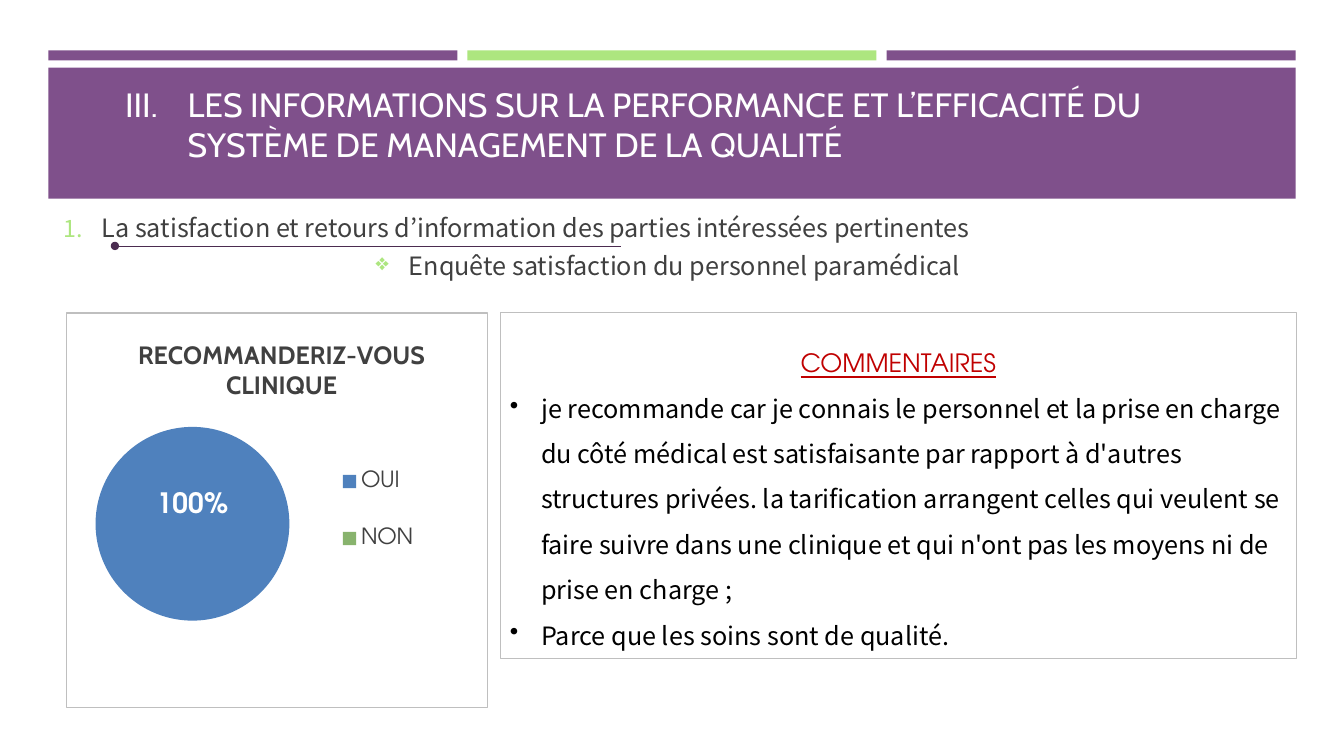
from lxml import etree
from pptx import Presentation
from pptx.chart.data import CategoryChartData
from pptx.dml.color import RGBColor
from pptx.enum.chart import XL_CHART_TYPE, XL_LABEL_POSITION, XL_LEGEND_POSITION
from pptx.enum.shapes import MSO_CONNECTOR, MSO_SHAPE
from pptx.enum.text import MSO_ANCHOR, MSO_AUTO_SIZE, PP_ALIGN
from pptx.oxml import parse_xml
from pptx.oxml.ns import nsdecls, qn
from pptx.util import Inches, Pt

COLORS = {
    "purple": "7F508B", "green": "ADE67F", "rule": "4B2C50", "border": "BFBFBF",
    "grey": "404040", "red": "C00000", "black": "000000", "white": "FFFFFF",
    "oui": "4F81BD", "non": "88B36D",
}
HEADING_FONT, BODY_FONT, ACCENT_FONT = "Cabin", "Noto Sans CJK KR", "TeX Gyre Adventor"


def rgb(name):
    return RGBColor.from_string(COLORS[name])


def style_font(font, face, size, color, bold=False):
    font.name, font.size, font.bold = face, Pt(size), bold
    font.color.rgb = rgb(color)


def add_run(paragraph, text, face, size, color):
    run = paragraph.add_run()
    run.text = text
    style_font(run.font, face, size, color)
    return run


def set_bullet(paragraph, indent, tag, color=None, **attributes):
    """Give the paragraph a hanging indent and a numbered or character bullet."""
    properties = paragraph._p.get_or_add_pPr()
    properties.set("marL", str(Inches(indent)))
    properties.set("indent", str(-Inches(indent)))
    if color:
        bullet_color = etree.SubElement(properties, qn("a:buClr"))
        etree.SubElement(bullet_color, qn("a:srgbClr"), val=COLORS[color])
        etree.SubElement(properties, qn("a:buSzPct"), val="92000")
    etree.SubElement(properties, qn(tag), **attributes)


def manual_layout(x, y, w=None, h=None, modes=True, inner=False):
    """Return a chart layout whose values are fractions of the chart's size."""
    parts = [("layoutTarget", "inner")] if inner else []
    if modes:
        parts += [("xMode", "edge"), ("yMode", "edge")]
    parts += [(k, v) for k, v in zip("xywh", (x, y, w, h)) if v is not None]
    body = "".join(f'<c:{tag} val="{value}"/>' for tag, value in parts)
    return parse_xml(f'<c:layout {nsdecls("c")}><c:manualLayout>{body}'
                     '</c:manualLayout></c:layout>')


def replace_layout(parent, layout, after):
    for old in parent.findall(qn("c:layout")):
        parent.remove(old)
    if after is None:
        parent.insert(0, layout)
    else:
        parent.find(qn(after)).addnext(layout)


def add_bar(slide, left, top, width, height, color):
    bar = slide.shapes.add_shape(MSO_SHAPE.RECTANGLE, Inches(left), Inches(top),
                                 Inches(width), Inches(height))
    bar.shadow.inherit = False
    bar.fill.solid()
    bar.fill.fore_color.rgb = rgb(color)
    bar.line.fill.background()


def add_banner(slide, left, top, width):
    gap = 0.1
    bar_width = (width - 2 * gap) / 3
    for i, color in enumerate(("purple", "green", "purple")):
        add_bar(slide, left + i * (bar_width + gap), top, bar_width, 0.1, color)
    add_bar(slide, left, top + 0.17, width, 1.3, "purple")

    title = slide.shapes.title
    slide.shapes._spTree.append(title._element)
    title.left, title.top = Inches(left + 0.66), Inches(top - 0.29)
    title.width, title.height = Inches(11.58), Inches(1.47)
    frame = title.text_frame
    frame.auto_size, frame.vertical_anchor = MSO_AUTO_SIZE.NONE, MSO_ANCHOR.BOTTOM
    paragraph = frame.paragraphs[0]
    paragraph.alignment = PP_ALIGN.LEFT
    set_bullet(paragraph, 0.62, "a:buAutoNum", type="romanUcPeriod", startAt="3")
    add_run(paragraph, "LES INFORMATIONS SUR LA PERFORMANCE ET L’EFFICACITÉ DU "
            "SYSTÈME DE MANAGEMENT DE LA QUALITÉ", HEADING_FONT, 24, "white")


def add_topic(slide, left, top, width, height):
    topic = slide.shapes.add_textbox(Inches(left), Inches(top), Inches(width), Inches(height))
    frame = topic.text_frame
    frame.word_wrap, frame.vertical_anchor = True, MSO_ANCHOR.MIDDLE
    section = frame.paragraphs[0]
    section.space_after = Pt(5)
    set_bullet(section, 0.38, "a:buAutoNum", "green", type="arabicPeriod")
    add_run(section, "La satisfaction et retours d’information des parties intéressées "
            "pertinentes", BODY_FONT, 18, "grey")
    survey = frame.add_paragraph()
    survey.alignment = PP_ALIGN.CENTER
    set_bullet(survey, 0.33, "a:buChar", "green", char="❖")
    add_run(survey, "Enquête satisfaction du personnel paramédical", BODY_FONT, 18, "grey")

    rule_y = Inches(top + 0.65)
    rule = slide.shapes.add_connector(MSO_CONNECTOR.STRAIGHT, Inches(left + 0.61), rule_y,
                                      Inches(left + 5.63), rule_y)
    rule.line.color.rgb, rule.line.width = rgb("rule"), Pt(0.25)
    etree.SubElement(rule.line._get_or_add_ln(), qn("a:headEnd"), type="oval")
    etree.SubElement(rule._element.spPr, qn("a:effectLst"))


def label_slices(series):
    """Show the share of the first slice only."""
    labels = series.data_labels
    labels.show_value, labels.show_percentage = False, True
    labels.position = XL_LABEL_POSITION.CENTER
    style_font(labels.font, ACCENT_FONT, 20, "white", bold=True)

    share = series.points[0].data_label
    style_font(share.font, ACCENT_FONT, 20, "white", bold=True)
    share.position = XL_LABEL_POSITION.CENTER
    share_xml = share._get_or_add_dLbl()
    share_xml.find(qn("c:showVal")).set("val", "0")
    share_xml.find(qn("c:showPercent")).set("val", "1")
    replace_layout(share_xml, manual_layout(0, -0.17, modes=False), "c:idx")

    empty_share = series.points[1].data_label._get_or_add_dLbl()
    for child in list(empty_share)[1:]:
        empty_share.remove(child)
    etree.SubElement(empty_share, qn("c:delete"), val="1")


def add_recommendation_chart(slide, left, top, width, height):
    data = CategoryChartData()
    data.categories = ["OUI", "NON"]
    data.add_series("Series 1", [100, 0])
    chart = slide.shapes.add_chart(XL_CHART_TYPE.PIE, Inches(left), Inches(top),
                                   Inches(width), Inches(height), data).chart
    style_font(chart.font, HEADING_FONT, 10, "black")
    border = parse_xml(f'<c:spPr {nsdecls("c", "a")}><a:noFill/><a:ln w="{Pt(0.75)}"><a:solidFill>'
                       f'<a:srgbClr val="{COLORS["border"]}"/></a:solidFill></a:ln></c:spPr>')
    chart._chartSpace.find(qn("c:txPr")).addprevious(border)

    chart.has_title = True
    heading = add_run(chart.chart_title.text_frame.paragraphs[0],
                      "RECOMMANDERIZ-VOUS CLINIQUE", HEADING_FONT, 18, "grey")
    heading.font.bold = True
    replace_layout(chart.chart_title._element, manual_layout(0.16, 0.05), "c:tx")

    chart.has_legend = True
    legend = chart.legend
    legend.position, legend.include_in_layout = XL_LEGEND_POSITION.RIGHT, False
    style_font(legend.font, ACCENT_FONT, 16, "grey")
    replace_layout(legend._element, manual_layout(0.62, 0.31, 0.24, 0.38), "c:legendPos")

    plot = chart.plots[0]
    plot.vary_by_categories = True
    replace_layout(chart._chartSpace.chart.plotArea,
                   manual_layout(0.07, 0.17, 0.46, 0.73, inner=True), None)
    series = plot.series[0]
    for i, color in enumerate(("oui", "non")):
        fill = series.points[i].format.fill
        fill.solid()
        fill.fore_color.rgb = rgb(color)
    label_slices(series)


def add_comments(slide, left, top, width, height):
    panel = slide.shapes.add_textbox(Inches(left), Inches(top), Inches(width), Inches(height))
    panel.line.color.rgb, panel.line.width = rgb("border"), Pt(0.75)
    frame = panel.text_frame
    frame.word_wrap = True
    heading = frame.paragraphs[0]
    heading.alignment, heading.line_spacing = PP_ALIGN.CENTER, 2.0
    add_run(heading, "COMMENTAIRES", ACCENT_FONT, 18, "red").font.underline = True
    for comment in (
        "je recommande car je connais le personnel et la prise en charge du côté médical est "
        "satisfaisante par rapport à d'autres structures privées. la tarification arrangent "
        "celles qui veulent se faire suivre dans une clinique et qui n'ont pas les moyens ni "
        "de prise en charge ;",
        "Parce que les soins sont de qualité.",
    ):
        paragraph = frame.add_paragraph()
        paragraph.line_spacing = 1.5
        set_bullet(paragraph, 0.31, "a:buChar", char="•")
        add_run(paragraph, comment, BODY_FONT, 18, "black")


def main():
    deck = Presentation()
    deck.slide_width, deck.slide_height = Inches(13.33), Inches(7.5)
    slide = deck.slides.add_slide(deck.slide_layouts[5])
    add_banner(slide, 0.48, 0.5, 12.37)
    add_topic(slide, 0.53, 1.79, 12.19, 1.31)
    add_recommendation_chart(slide, 0.65, 3.1, 4.19, 3.92)
    add_comments(slide, 4.96, 3.1, 7.9, 3.43)
    deck.save("out.pptx")


if __name__ == "__main__":
    main()
